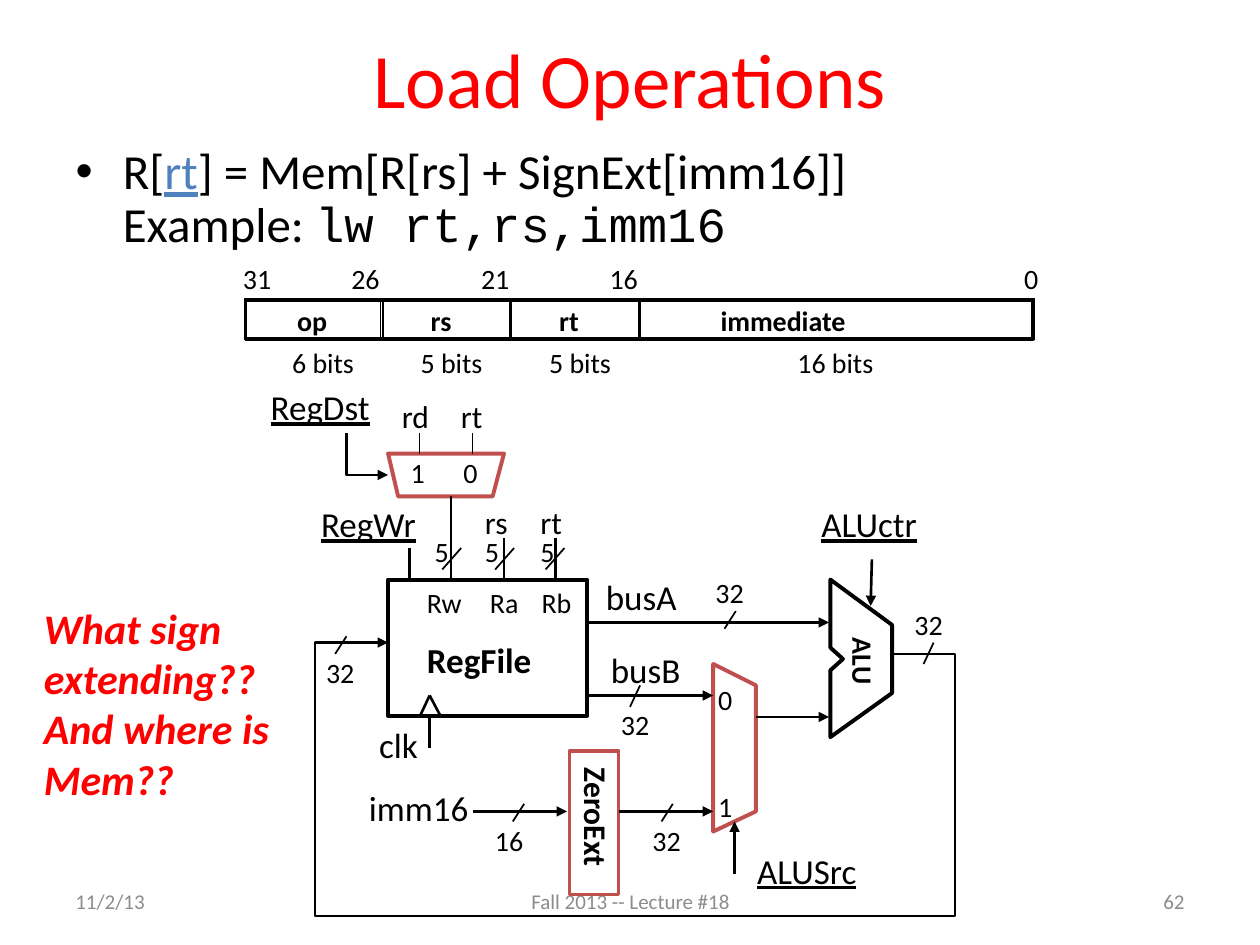
from pptx import Presentation
from pptx.dml.color import RGBColor
from pptx.enum.shapes import MSO_CONNECTOR, MSO_SHAPE
from pptx.enum.text import MSO_ANCHOR, PP_ALIGN
from pptx.oxml.ns import qn
from pptx.util import Inches, Pt
from lxml import etree

STRAIGHT = MSO_CONNECTOR.STRAIGHT
RECTANGLE = MSO_SHAPE.RECTANGLE
MIDDLE = MSO_ANCHOR.MIDDLE
LEFT, CENTER, RIGHT = PP_ALIGN.LEFT, PP_ALIGN.CENTER, PP_ALIGN.RIGHT

COLORS = {"black": "000000", "red": "FF0000", "blue": "4F81BD",
          "control": "C0504D", "gray": "8C8C8C"}

TITLE = "Load Operations"
# Each line of the bullet: (text, color, format)
BULLET = [
    [("R[", "black", {}), ("rt", "blue", {"underline": True}),
     ("] = Mem[R[rs] + SignExt[imm16]]", "black", {})],
    [("Example: ", "black", {}), ("lw rt,rs,imm16", "black", {"name": "Courier New"})],
]
QUESTIONS = ["What sign extending??", "And where is Mem??"]
FOOTER = [("11/2/13", 0.5, 2.33, LEFT),
          ("Fall 2013 -- Lecture #18", 3.42, 3.17, CENTER),
          ("62", 7.17, 2.33, RIGHT)]

# Instruction format: (name, left, width, name left, name width)
FIELDS = [("op", 1.94, 1.08, 2.26, 0.44), ("rs", 3.04, 1.01, 3.32, 0.37),
          ("rt", 4.06, 1.01, 4.34, 0.37), ("immediate", 5.08, 3.13, 5.62, 1.21)]
BIT_NUMBERS = [("31", 1.83, 0.43), ("26", 2.69, 0.43), ("21", 3.72, 0.43),
               ("16", 4.74, 0.43), ("0", 8.03, 0.31)]
FIELD_SIZES = [("6 bits", 2.22, 0.7), ("5 bits", 3.24, 0.7),
               ("5 bits", 4.26, 0.7), ("16 bits", 6.23, 0.81)]

# Datapath labels by style: (text, left, top, width)
SMALL = [("32", 7.16, 4.77, 0.43), ("32", 2.49, 5.15, 0.43), ("32", 5.58, 4.52, 0.43),
         ("32", 4.83, 5.57, 0.43), ("32", 5.08, 6.49, 0.43), ("16", 3.83, 6.49, 0.43),
         ("5", 3.35, 4.19, 0.31), ("5", 3.75, 4.19, 0.31), ("5", 4.19, 4.19, 0.31),
         ("Rw", 3.29, 4.6, 0.48), ("Ra", 3.79, 4.6, 0.44), ("Rb", 4.2, 4.6, 0.46),
         ("1", 3.16, 3.57, 0.31), ("0", 3.58, 3.57, 0.31),
         ("0", 5.6, 5.37, 0.31), ("1", 5.6, 6.22, 0.31)]
REGISTERS = [("rd", 3.09, 3.1, 0.42), ("rt", 3.56, 3.1, 0.37),
             ("rs", 3.75, 3.94, 0.38), ("rt", 4.19, 3.94, 0.37)]
SIGNALS = [("clk", 2.91, 5.69, 0.51), ("busA", 4.71, 4.52, 0.78),
           ("busB", 4.75, 5.1, 0.77), ("imm16", 2.83, 6.19, 1.0)]
CONTROLS = [("RegDst", 2.05, 3.01, 1.03), ("RegWr", 2.45, 3.94, 0.96),
            ("ALUctr", 6.42, 3.94, 1.14), ("ALUSrc", 5.91, 6.69, 0.99)]
LABELS = [(16, {}, SMALL), (18, {}, REGISTERS), (20, {}, SIGNALS),
          (20, {"underline": True}, CONTROLS),
          (20, {"bold": True}, [("RegFile", 3.29, 5.02, 1.04)])]
VERTICAL_LABELS = [("ZeroExt", 4.24, 6.29, 0.99, 18), ("ALU", 6.56, 5.08, 0.59, 16)]

REG_FILE = (3.08, 4.6, 1.58, 1.08)
ZERO_EXT = (4.52, 5.96, 0.39, 1.14)
DESTINATION_MUX = [(3.08, 3.6), (3.16, 3.94), (3.91, 3.94), (4, 3.6)]
SOURCE_MUX = [(5.66, 5.27), (5.66, 6.6), (6, 6.44), (6, 5.44)]
ALU = [(6.59, 4.6), (6.59, 5.14), (6.69, 5.23), (6.59, 5.32),
       (6.59, 5.85), (7.08, 5.5), (7.08, 4.96)]
BENT_ARROWS = [
    [(2.75, 3.44), (2.75, 3.77), (3.08, 3.77)],
    [(7.08, 5.19), (7.58, 5.19), (7.58, 7.27), (2.5, 7.27), (2.5, 5.1), (3.08, 5.1)],
]

# Straight wires: (x1, y1, x2, y2)
ARROWS = [(4.66, 4.94, 6.58, 4.94), (6.92, 4.44, 6.91, 4.81), (4.66, 5.52, 5.66, 5.52),
          (6, 5.69, 6.58, 5.69), (4.91, 6.44, 5.66, 6.44), (3.75, 6.44, 4.5, 6.44),
          (5.83, 6.94, 5.83, 6.52)]
WIRES = [(3.25, 4.35, 3.25, 4.6), (3.58, 3.94, 3.58, 4.6), (4, 4.27, 4, 4.6),
         (4.41, 4.27, 4.41, 4.6), (3.41, 5.52, 3.33, 5.69), (3.41, 5.52, 3.5, 5.69),
         (3.41, 5.69, 3.41, 5.94)]
MUX_INPUTS = [(x, 3.44, x, 3.6) for x in (3.33, 3.75)]
# Bus width marks, by (width, height): left and top of each
SLASHES = {
    (0.09, 0.14): [(2.66, 5.05), (5.75, 4.85), (5.25, 6.38), (4.07, 6.38)],
    (0.08, 0.17): [(7.33, 5.1), (5, 5.44)],
    (0.15, 0.17): [(3.51, 4.35), (3.93, 4.35), (4.33, 4.35)],
}


def rgb(color):
    return RGBColor.from_string(COLORS[color])


def add_run(paragraph, text, size, color="black", style=None):
    run = paragraph.add_run()
    run.text = text
    run.font.color.rgb = rgb(color)
    for attribute, value in {"name": "Calibri", "size": Pt(size), **(style or {})}.items():
        setattr(run.font, attribute, value)


def place(shape, *box):
    for side, length in zip(("left", "top", "width", "height"), box):
        setattr(shape, side, Inches(length))


def add_label(slide, text, left, top, width, size, style=None):
    box = slide.shapes.add_textbox(
        Inches(left), Inches(top), Inches(width), Inches(0.02 * size + 0.04))
    box.text_frame.word_wrap = False
    add_run(box.text_frame.paragraphs[0], text, size, style=style)
    return box


def set_stroke(shape, color, weight, arrow=False):
    shape.line.color.rgb = rgb(color)
    shape.line.width = Pt(weight)
    if arrow:
        outline = shape._element.spPr.find(qn("a:ln"))
        etree.SubElement(outline, qn("a:tailEnd"), type="triangle")


def outline_shape(shape, color, weight, arrow=False):
    shape.shadow.inherit = False
    shape.fill.background()
    set_stroke(shape, color, weight, arrow)


def add_box(slide, box, color, weight):
    outline_shape(slide.shapes.add_shape(RECTANGLE, *map(Inches, box)), color, weight)


def add_outline(slide, points, color, weight, closed=True, arrow=False):
    corners = [(Inches(x), Inches(y)) for x, y in points]
    builder = slide.shapes.build_freeform(*corners[0])
    builder.add_line_segments(corners[1:], close=closed)
    outline_shape(builder.convert_to_shape(), color, weight, arrow)


def add_wire(slide, ends, weight, arrow=False):
    wire = slide.shapes.add_connector(STRAIGHT, *map(Inches, ends))
    set_stroke(wire, "black", weight, arrow)
    etree.SubElement(wire._element.spPr, qn("a:effectLst"))


def add_heading(slide):
    title, body = slide.placeholders
    place(title, 0.5, -0.01, 9, 1.25)
    add_run(title.text_frame.paragraphs[0], TITLE, 44, "red")
    place(body, 0.5, 1.12, 9, 1.49)
    bullet = body.text_frame.paragraphs[0]
    bullet.line_spacing = 0.9
    for number, line in enumerate(BULLET):
        if number:
            bullet.add_line_break()
        for text, color, style in line:
            add_run(bullet, text, 28, color, style)


def add_instruction_format(slide):
    add_box(slide, (1.95, 2.38, 6.25, 0.31), "black", 2)
    for name, left, width, name_left, name_width in FIELDS:
        add_box(slide, (left, 2.37, width, 0.32), "black", 1)
        add_label(slide, name, name_left, 2.36, name_width, 16, {"bold": True})
    for top, labels in ((2.03, BIT_NUMBERS), (2.69, FIELD_SIZES)):
        for text, left, width in labels:
            add_label(slide, text, left, top, width, 16)


def add_datapath(slide):
    add_box(slide, ZERO_EXT, "control", 2)
    add_box(slide, REG_FILE, "black", 2.25)
    for points, color in ((DESTINATION_MUX, "control"), (SOURCE_MUX, "control"), (ALU, "black")):
        add_outline(slide, points, color, 2.25)
    for points in BENT_ARROWS:
        add_outline(slide, points, "black", 1.5, closed=False, arrow=True)
    for wires, weight, arrow in ((ARROWS, 1.5, True), (WIRES, 1.5, False), (MUX_INPUTS, 1, False)):
        for ends in wires:
            add_wire(slide, ends, weight, arrow)
    for (width, height), corners in SLASHES.items():
        for left, top in corners:
            add_wire(slide, (left + width, top, left, top + height), 1)
    for size, style, labels in LABELS:
        for label in labels:
            add_label(slide, *label, size, style)
    for label in VERTICAL_LABELS:
        add_label(slide, *label, {"bold": True}).rotation = 90


def add_questions(slide):
    box = slide.shapes.add_textbox(*map(Inches, (0.25, 4.73, 2.03, 1.72)))
    frame = box.text_frame
    frame.word_wrap = True
    for number, question in enumerate(QUESTIONS):
        paragraph = frame.add_paragraph() if number else frame.paragraphs[0]
        add_run(paragraph, question, 24, "red", {"bold": True, "italic": True})


def add_footer(slide):
    for text, left, width, alignment in FOOTER:
        frame = slide.shapes.add_textbox(*map(Inches, (left, 6.95, width, 0.4))).text_frame
        frame.word_wrap = True
        frame.vertical_anchor = MIDDLE
        frame.paragraphs[0].alignment = alignment
        add_run(frame.paragraphs[0], text, 12, "gray")


def main():
    deck = Presentation()
    deck.slide_width, deck.slide_height = Inches(10), Inches(7.5)
    slide = deck.slides.add_slide(deck.slide_layouts[1])
    for add_part in (add_heading, add_footer, add_instruction_format, add_datapath, add_questions):
        add_part(slide)
    deck.save("out.pptx")


if __name__ == "__main__":
    main()
